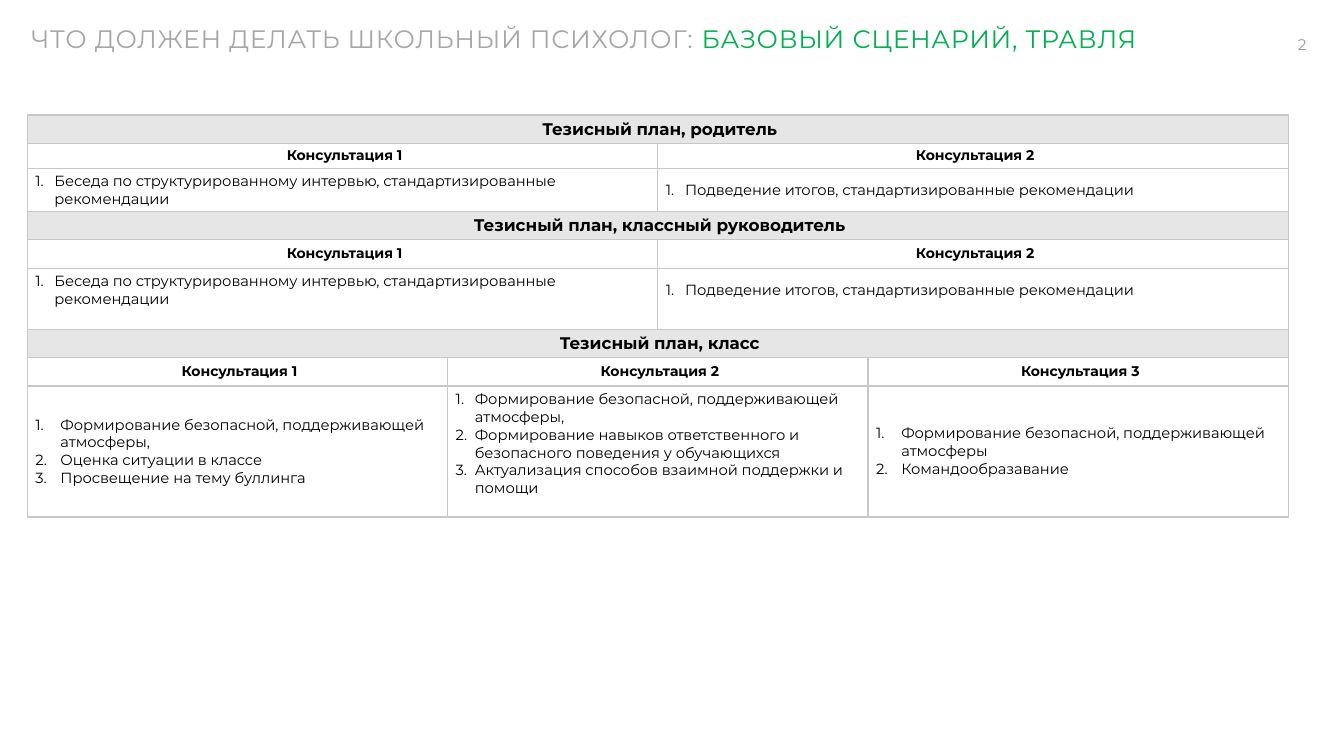
from lxml import etree
from pptx import Presentation
from pptx.dml.color import RGBColor
from pptx.enum.text import MSO_ANCHOR, PP_ALIGN
from pptx.oxml.ns import qn
from pptx.util import Inches, Pt

MIDDLE = MSO_ANCHOR.MIDDLE
LEFT, CENTER, RIGHT = PP_ALIGN.LEFT, PP_ALIGN.CENTER, PP_ALIGN.RIGHT

FONT = "Montserrat"
COLORS = {"title": "A6A6A6", "accent": "00B050", "number": "999999",
          "text": "000000", "band": "E7E6E6", "cell": "FFFFFF", "border": "C8C8C8"}

# Content
TITLE = [("ЧТО ДОЛЖЕН ДЕЛАТЬ ШКОЛЬНЫЙ ПСИХОЛОГ: ", "title"),
         ("БАЗОВЫЙ СЦЕНАРИЙ, ТРАВЛЯ", "accent")]
PAGE_NUMBER = "2"
INTERVIEW = ["Беседа по структурированному интервью, стандартизированные рекомендации"]
SUMMARY = ["Подведение итогов, стандартизированные рекомендации"]

# Each plan: heading, row heights, and per consultation (steps, indent, bottom margin)
PLANS = [
    ("Тезисный план, родитель", (0.28, 0.25, 0.43),
     [(INTERVIEW, 0.19, 0.04), (SUMMARY, 0.19, 0.04)]),
    ("Тезисный план, классный руководитель", (0.28, 0.28, 0.61),
     [(INTERVIEW, 0.19, 0.21), (SUMMARY, 0.19, 0.21)]),
    ("Тезисный план, класс", (0.28, 0.28, 1.3),
     [(["Формирование безопасной, поддерживающей атмосферы,",
        "Оценка ситуации в классе",
        "Просвещение на тему буллинга"], 0.25, 0.04),
      (["Формирование безопасной, поддерживающей атмосферы,",
        "Формирование навыков ответственного и безопасного поведения у обучающихся",
        "Актуализация способов взаимной поддержки и помощи"], 0.19, 0.19),
      (["Формирование безопасной, поддерживающей атмосферы",
        "Командообразавание"], 0.25, 0.04)]),
]

# Table grid: thirds, with the middle third split so that halves also fit
TABLE_LEFT, TABLE_TOP, TABLE_WIDTH = 0.27, 1.14, 12.51
COLUMN_SHARES = (1 / 3, 1 / 6, 1 / 6, 1 / 3)
SPANS = {2: [(0, 1), (2, 3)], 3: [(0, 0), (1, 2), (3, 3)]}


def add_run(paragraph, text, size, color, bold=False):
    run = paragraph.add_run()
    run.text = text
    run.font.name = FONT
    run.font.size = Pt(size)
    run.font.bold = bold
    run.font.color.rgb = RGBColor.from_string(COLORS[color])
    return run


def add_text_box(slide, left, top, width, height, margins):
    frame = slide.shapes.add_textbox(
        Inches(left), Inches(top), Inches(width), Inches(height)).text_frame
    frame.word_wrap = True
    frame.margin_left = frame.margin_right = Inches(margins[0])
    frame.margin_top = frame.margin_bottom = Inches(margins[1])
    return frame.paragraphs[0]


def number_paragraph(paragraph, indent):
    properties = paragraph._p.get_or_add_pPr()
    properties.set("marL", str(Inches(indent)))
    properties.set("indent", str(-Inches(indent)))
    etree.SubElement(properties, qn("a:buAutoNum"), type="arabicPeriod")


def style_cell(cell, color):
    cell.fill.solid()
    cell.fill.fore_color.rgb = RGBColor.from_string(COLORS[color])
    properties = cell._tc.get_or_add_tcPr()
    for position, side in enumerate(("a:lnL", "a:lnR", "a:lnT", "a:lnB")):
        line = etree.Element(qn(side), w=str(Pt(1)))
        fill = etree.SubElement(line, qn("a:solidFill"))
        etree.SubElement(fill, qn("a:srgbClr"), val=COLORS["border"])
        properties.insert(position, line)


def fill_span(table, row, span, lines, size, color="cell", bold=True,
              indent=None, bottom=0.04):
    first, last = span
    for column in range(first, last + 1):
        style_cell(table.cell(row, column), color)
    cell = table.cell(row, first)
    if last > first:
        cell.merge(table.cell(row, last))
    cell.vertical_anchor = MIDDLE
    cell.margin_left = Inches(0.08)
    cell.margin_right = cell.margin_top = Inches(0.04)
    cell.margin_bottom = Inches(bottom)
    frame = cell.text_frame
    for index, line in enumerate(lines):
        paragraph = frame.add_paragraph() if index else frame.paragraphs[0]
        paragraph.alignment = LEFT if indent else CENTER
        if indent:
            number_paragraph(paragraph, indent)
        add_run(paragraph, line, size, "text", bold)


presentation = Presentation()
presentation.slide_width, presentation.slide_height = Inches(13.33), Inches(7.5)
slide = presentation.slides.add_slide(presentation.slide_layouts[6])

# Title and page number
title = add_text_box(slide, 0.21, 0.18, 13.1, 0.4, (0.1, 0.05))
for text, color in TITLE:
    run = add_run(title, text, 18, color)
    run._r.get_or_add_rPr().set("spc", "50")
number = add_text_box(slide, 12.6, 0.35, 0.36, 0.19, (0, 0))
number.alignment = RIGHT
add_run(number, PAGE_NUMBER, 11, "number")

# Table of plans
heights = [height for _, plan_heights, _ in PLANS for height in plan_heights]
table = slide.shapes.add_table(
    len(heights), len(COLUMN_SHARES), Inches(TABLE_LEFT), Inches(TABLE_TOP),
    Inches(TABLE_WIDTH), Inches(sum(heights))).table
table.first_row = table.horz_banding = False
for column, share in zip(table.columns, COLUMN_SHARES):
    column.width = Inches(TABLE_WIDTH * share)
for row, height in zip(table.rows, heights):
    row.height = Inches(height)

for plan_index, (heading, plan_heights, consultations) in enumerate(PLANS):
    top_row = plan_index * len(plan_heights)
    fill_span(table, top_row, (0, 3), [heading], 12, "band")
    spans = SPANS[len(consultations)]
    for order, (span, (steps, indent, bottom)) in enumerate(zip(spans, consultations), 1):
        fill_span(table, top_row + 1, span, [f"Консультация {order}"], 10)
        fill_span(table, top_row + 2, span, steps, 10.5, bold=False,
                  indent=indent, bottom=bottom)

presentation.save("out.pptx")
